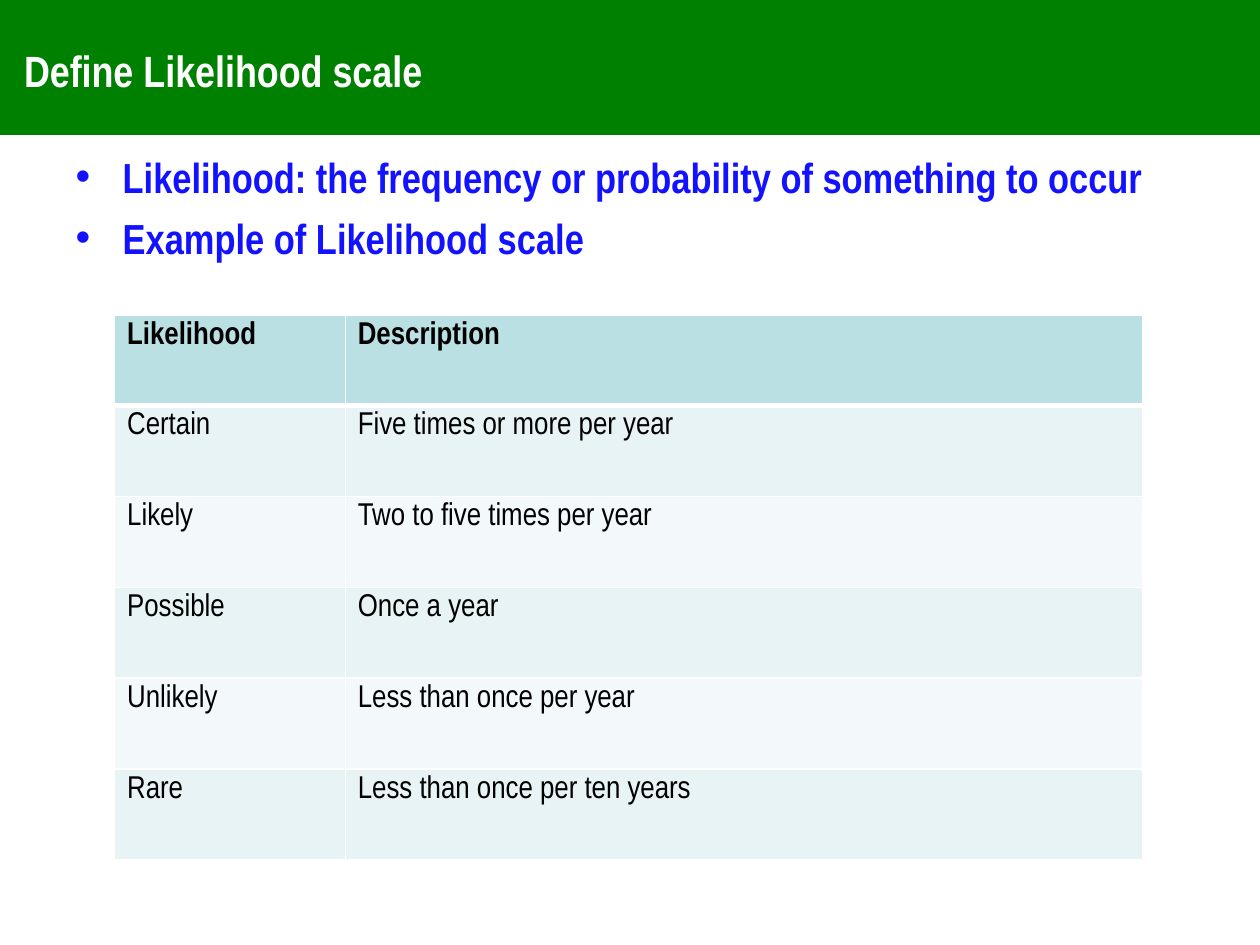
from lxml import etree
from pptx import Presentation
from pptx.dml.color import RGBColor
from pptx.enum.shapes import MSO_SHAPE
from pptx.enum.text import MSO_ANCHOR, MSO_AUTO_SIZE, PP_ALIGN
from pptx.oxml.ns import qn
from pptx.util import Cm, Pt

RECT = MSO_SHAPE.RECTANGLE
MIDDLE, TOP = MSO_ANCHOR.MIDDLE, MSO_ANCHOR.TOP
LEFT = PP_ALIGN.LEFT
FIXED = MSO_AUTO_SIZE.NONE
HUES = {
    "band": "008000", "title": "FFFFFF", "list": "1312FF", "text": "000000",
    "head": "BBE0E3", "odd": "E7F3F4", "even": "F3F9FA", "rule": "FFFFFF",
}


def style(para, size, hue, bold):
    para.alignment = LEFT
    font = para.font
    font.name = "Arial Narrow"
    font.size = Pt(size)
    font.bold = bold
    font.color.rgb = RGBColor.from_string(HUES[hue])


def place(shape, left, top, width, height):
    shape.left, shape.top = Cm(left), Cm(top)
    shape.width, shape.height = Cm(width), Cm(height)


deck = Presentation()
deck.slide_width, deck.slide_height = Cm(25.4), Cm(19.05)
slide = deck.slides.add_slide(deck.slide_layouts[1])
shapes = slide.shapes

band = shapes.add_shape(RECT, Cm(0), Cm(-0.08), Cm(25.4), Cm(2.8))
band.shadow.inherit = False
band.fill.solid()
band.fill.fore_color.rgb = RGBColor.from_string(HUES["band"])
band.line.fill.background()
shapes.title.element.addprevious(band.element)

title = shapes.title
place(title, 0.23, 0.53, 22.86, 1.75)
title.text_frame.text = "Define Likelihood scale"
title.text_frame.auto_size = FIXED
title.text_frame.vertical_anchor = MIDDLE
style(title.text_frame.paragraphs[0], 25, "title", True)

body = slide.placeholders[1]
place(body, 1.27, 2.92, 22.86, 14.1)
frame = body.text_frame
frame.text = ("Likelihood: the frequency or probability of something to occur\n"
              "Example of Likelihood scale")
frame.auto_size = FIXED
frame.vertical_anchor = TOP
for num, para in enumerate(frame.paragraphs):
    props = para._p.get_or_add_pPr()
    props.set("marL", str(Cm(0.95)))
    props.set("indent", str(Cm(-0.95)))
    para.space_before = Pt(6 if num else 0)
    etree.SubElement(props, qn("a:buChar")).set("char", "•")
    style(para, 24, "list", True)

rows = [
    ("Likelihood", "Description"),
    ("Certain", "Five times or more per year"),
    ("Likely", "Two to five times per year"),
    ("Possible", "Once a year"),
    ("Unlikely", "Less than once per year"),
    ("Rare", "Less than once per ten years"),
]
grid = shapes.add_table(len(rows), 2, Cm(2.31), Cm(6.35), Cm(20.73), Cm(10.98)).table
for col, width in zip(grid.columns, (4.65, 16.08)):
    col.width = Cm(width)
for row, words in enumerate(rows):
    grid.rows[row].height = Cm(1.83)
    shade = "head" if row == 0 else "odd" if row % 2 else "even"
    for col, word in enumerate(words):
        cell = grid.cell(row, col)
        cell.text = word
        style(cell.text_frame.paragraphs[0], 18, "text", row == 0)
        cell.fill.solid()
        cell.fill.fore_color.rgb = RGBColor.from_string(HUES[shade])
        props = cell._tc.get_or_add_tcPr()
        for spot, side in enumerate(("lnL", "lnR", "lnT", "lnB")):
            thick = (row, side) in ((0, "lnB"), (1, "lnT"))
            line = etree.Element(qn(f"a:{side}"), w=str(Pt(3 if thick else 1)))
            fill = etree.SubElement(line, qn("a:solidFill"))
            etree.SubElement(fill, qn("a:srgbClr"), val=HUES["rule"])
            props.insert(spot, line)

deck.save("out.pptx")
